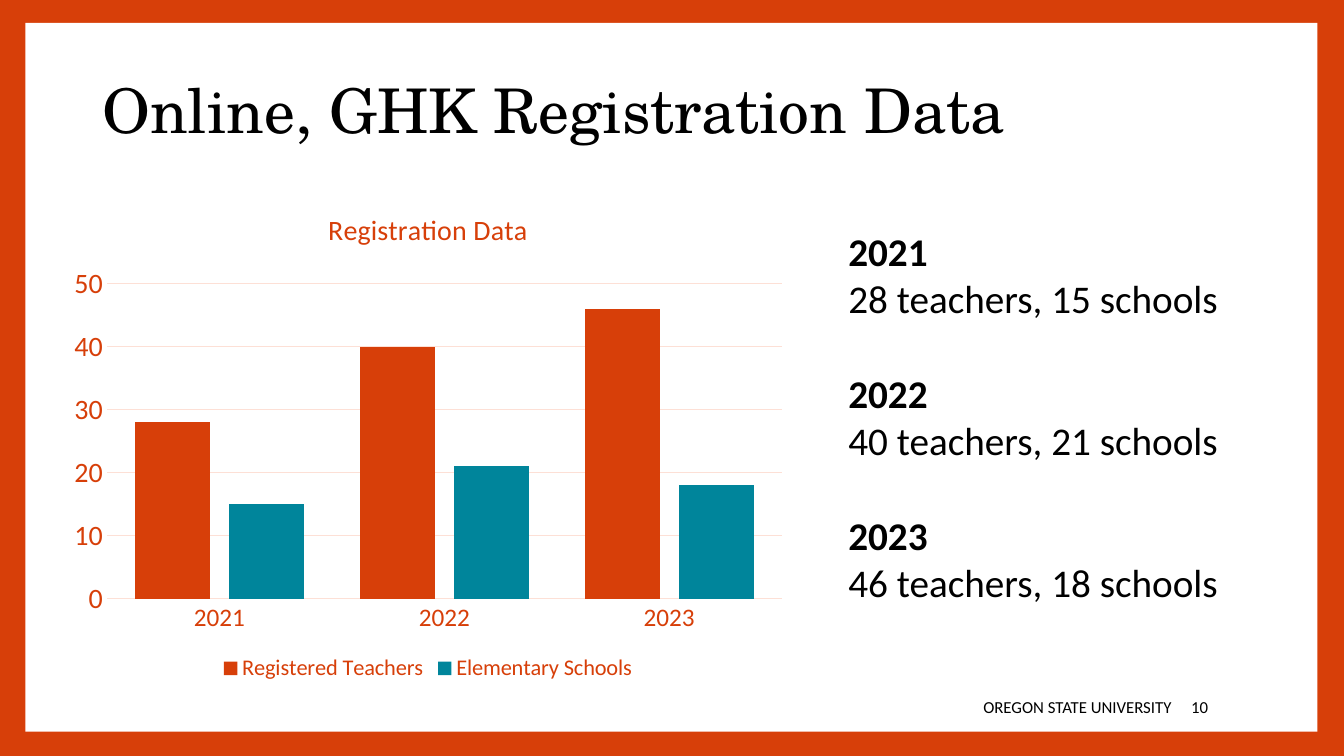
from pptx import Presentation
from pptx.chart.data import CategoryChartData
from pptx.dml.color import RGBColor
from pptx.enum.chart import XL_CHART_TYPE, XL_LEGEND_POSITION, XL_TICK_MARK
from pptx.enum.shapes import MSO_SHAPE
from pptx.enum.text import MSO_ANCHOR, PP_ALIGN
from pptx.util import Cm, Pt

COLOURS = {"orange": "D73F09", "teal": "00859B", "grid": "FDE0D6",
           "black": "000000", "white": "FFFFFF"}
YEARS = ["2021", "2022", "2023"]
SERIES = {"Registered Teachers": ([28, 40, 46], "orange"),
          "Elementary Schools": ([15, 21, 18], "teal")}


def colour(name):
    return RGBColor.from_string(COLOURS[name])


class RegistrationPage:
    """Holds the style and the current slide, and adds elements to it."""

    def __init__(self, deck, background):
        self.page = deck.slides.add_slide(deck.slide_layouts[6])
        self.page.background.fill.solid()
        self.page.background.fill.fore_color.rgb = colour(background)

    def style(self, font, size, shade="black", name="Calibri", bold=False):
        formats = {"size": Pt(size), "name": name, "bold": bold}
        for key, value in formats.items():
            setattr(font, key, value)
        font.color.rgb = colour(shade)

    def panel(self, place, fill):
        shape = self.page.shapes.add_shape(MSO_SHAPE.RECTANGLE, *map(Cm, place))
        shape.shadow.inherit = False
        shape.fill.solid()
        shape.fill.fore_color.rgb = colour(fill)
        shape.line.fill.background()

    def text(self, place, lines, size, anchor=MSO_ANCHOR.MIDDLE, name="Calibri", **formats):
        box = self.page.shapes.add_textbox(*map(Cm, place))
        frame = box.text_frame
        frame.word_wrap = True
        frame.vertical_anchor = anchor
        for index, (words, bold, gap) in enumerate(lines):
            para = frame.add_paragraph() if index else frame.paragraphs[0]
            if gap:
                para.space_before = Pt(gap)
            for key, value in formats.items():
                setattr(para, key, value)
            span = para.add_run()
            span.text = words
            self.style(span.font, size, name=name, bold=bold)

    def column_chart(self, place, title, categories, series):
        data = CategoryChartData()
        data.categories = categories
        for name, (values, _) in series.items():
            data.add_series(name, values)
        chart = self.page.shapes.add_chart(
            XL_CHART_TYPE.COLUMN_CLUSTERED, *map(Cm, place), data).chart
        self.style(chart.font, 10, "orange")

        chart.has_title = True
        heading = chart.chart_title.text_frame
        heading.text = title
        self.style(heading.paragraphs[0].runs[0].font, 20, "orange")
        chart.chart_title.include_in_layout = False

        chart.has_legend = True
        chart.legend.position = XL_LEGEND_POSITION.BOTTOM
        chart.legend.include_in_layout = False
        self.style(chart.legend.font, 16, "orange")

        for axis, size in ((chart.category_axis, 18), (chart.value_axis, 20)):
            axis.major_tick_mark = axis.minor_tick_mark = XL_TICK_MARK.NONE
            axis.format.line.fill.background()
            self.style(axis.tick_labels.font, size, "orange")
        scale = chart.value_axis
        scale.minimum_scale, scale.maximum_scale, scale.major_unit = 0, 50, 10
        grid = scale.major_gridlines.format.line
        grid.width = Pt(0.75)
        grid.color.rgb = colour("grid")

        plot = chart.plots[0]
        plot.gap_width, plot.overlap, plot.vary_by_categories = 75, -25, False
        for bars, (_, shade) in zip(plot.series, series.values()):
            bars.format.fill.solid()
            bars.format.fill.fore_color.rgb = colour(shade)


def main():
    deck = Presentation()
    deck.slide_width, deck.slide_height = Cm(33.87), Cm(19.05)
    page = RegistrationPage(deck, "orange")
    page.panel((0.64, 0.58, 32.56, 17.86), "white")
    page.text((2.33, 1.01, 29.21, 3.68), [("Online, GHK Registration Data", False, 0)],
              44, name="TeX Gyre Schola", line_spacing=0.9)
    page.text((11.22, 17.3, 18.56, 1.01), [("OREGON STATE UNIVERSITY", False, 0)],
              12, alignment=PP_ALIGN.RIGHT, space_after=Pt(6))
    page.text((29.77, 17.3, 1.76, 1.01), [("10", False, 0)], 12, space_after=Pt(6))
    page.column_chart((1.5, 4.78, 18.57, 12.52), "Registration Data", YEARS, SERIES)

    summary = []
    for index, (year, teachers, schools) in enumerate(
            zip(YEARS, *(values for values, _ in SERIES.values()))):
        summary.append((year, True, 34 if index else 0))
        summary.append((f"{teachers} teachers, {schools} schools", False, 0))
    page.text((21.13, 5.61, 12.73, 9.83), summary, 28, MSO_ANCHOR.TOP)
    deck.save("out.pptx")


if __name__ == "__main__":
    main()
